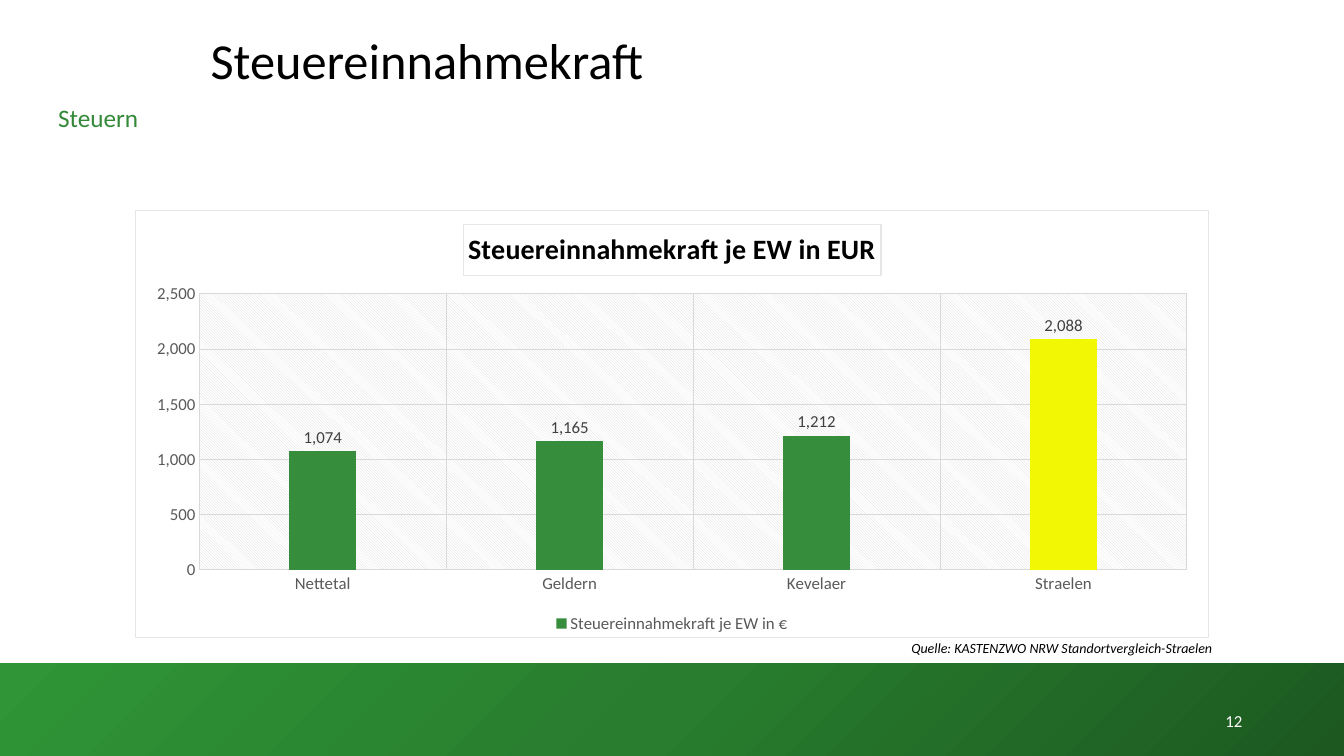
from copy import deepcopy
from lxml import etree
from pptx import Presentation
from pptx.chart.data import CategoryChartData
from pptx.dml.color import RGBColor
from pptx.enum.chart import XL_CHART_TYPE, XL_LABEL_POSITION, XL_LEGEND_POSITION, XL_TICK_MARK
from pptx.enum.shapes import MSO_SHAPE
from pptx.enum.text import MSO_ANCHOR, PP_ALIGN
from pptx.oxml import parse_xml
from pptx.oxml.ns import nsdecls, qn
from pptx.util import Pt

COLUMN = XL_CHART_TYPE.COLUMN_CLUSTERED
BOTTOM = XL_LEGEND_POSITION.BOTTOM
OUTSIDE = XL_LABEL_POSITION.OUTSIDE_END
NO_TICK = XL_TICK_MARK.NONE
RECT = MSO_SHAPE.RECTANGLE
TOP, MIDDLE = MSO_ANCHOR.TOP, MSO_ANCHOR.MIDDLE
LEFT, CENTER, RIGHT = PP_ALIGN.LEFT, PP_ALIGN.CENTER, PP_ALIGN.RIGHT
PX = 9144
FACE = "Calibri"
COLORS = {
    "black": "000000", "white": "FFFFFF", "dark": "1C5820", "mid": "287D2E",
    "light": "2F9536", "head": "348939", "bar": "368E3C", "mark": "F2F703",
    "grid": "D9D9D9", "frame": "E7E6E6", "axis": "595959", "label": "404040",
}


def rgb(name):
    return RGBColor.from_string(COLORS[name])


def style(font, size, color, **extra):
    values = {"name": FACE, "size": Pt(size), **extra}
    for key, value in values.items():
        setattr(font, key, value)
    font.color.rgb = rgb(color)


deck = Presentation()
deck.slide_width, deck.slide_height = 1333 * PX, 750 * PX
slide = deck.slides.add_slide(deck.slide_layouts[6])

band = slide.shapes.add_shape(RECT, 0, 658 * PX, 1333 * PX, 92 * PX)
band.shadow.inherit = False
band.line.fill.background()
band.fill.gradient()
band.fill.gradient_angle = 135
stops = band._element.spPr.find(".//" + qn("a:gsLst"))
stops.insert(1, deepcopy(stops[0]))
shades = [(0, "dark"), (0.5, "mid"), (1, "light")]
for stop, (place, name) in zip(band.fill.gradient_stops, shades):
    stop.position = place
    stop.color.rgb = rgb(name)

data = CategoryChartData(number_format="#,##0")
data.categories = ["Nettetal", "Geldern", "Kevelaer", "Straelen"]
data.add_series("Steuereinnahmekraft je EW in €", [1074, 1165, 1212, 2088])
chart = slide.shapes.add_chart(COLUMN, 134 * PX, 208 * PX, 1065 * PX, 425 * PX, data).chart
style(chart.font, 10, "black")
chart.has_title = True
chart.chart_title.text_frame.text = "Steuereinnahmekraft je EW in EUR"
style(chart.chart_title.text_frame.paragraphs[0].runs[0].font, 20, "black", bold=True)
chart.has_legend = True
chart.legend.position = BOTTOM
chart.legend.include_in_layout = False
style(chart.legend.font, 12, "axis")

for axis in (chart.category_axis, chart.value_axis):
    axis.major_tick_mark = axis.minor_tick_mark = NO_TICK
    axis.has_major_gridlines = True
    style(axis.tick_labels.font, 12, "axis")
    for line in (axis.major_gridlines.format.line, axis.format.line):
        line.color.rgb = rgb("grid")
        line.width = Pt(0.75)
scale = chart.value_axis
scale.format.line.fill.background()
scale.minimum_scale, scale.maximum_scale, scale.major_unit = 0, 2500, 500
scale.tick_labels.number_format = "#,##0"
scale.tick_labels.number_format_is_linked = False

plot = chart.plots[0]
plot.gap_width, plot.overlap, plot.vary_by_categories = 267, -43, False
bars = plot.series[0]
for part, name in ((bars, "bar"), (bars.points[3], "mark")):
    part.format.fill.solid()
    part.format.fill.fore_color.rgb = rgb(name)
labels = bars.data_labels
formats = {"show_value": True, "position": OUTSIDE, "number_format": "#,##0",
           "number_format_is_linked": False}
for key, value in formats.items():
    setattr(labels, key, value)
style(labels.font, 12, "label")

frame = parse_xml(
    f'<c:spPr {nsdecls("c", "a")}><a:solidFill><a:srgbClr val="{COLORS["white"]}"/></a:solidFill>'
    f'<a:ln w="9525"><a:solidFill><a:srgbClr val="{COLORS["frame"]}"/></a:solidFill></a:ln></c:spPr>')
hatch = parse_xml(
    f'<c:spPr {nsdecls("c", "a")}><a:pattFill prst="ltDnDiag">'
    f'<a:fgClr><a:srgbClr val="{COLORS["grid"]}"/></a:fgClr>'
    f'<a:bgClr><a:srgbClr val="{COLORS["white"]}"/></a:bgClr></a:pattFill>'
    '<a:ln><a:noFill/></a:ln></c:spPr>')
root = chart._chartSpace.find(qn("c:chart"))
root.find(qn("c:title")).append(deepcopy(frame))
root.find(qn("c:plotArea")).append(hatch)
root.addnext(frame)
etree.cleanup_namespaces(root)

texts = [
    ("12", (942, 695, 300, 40), 12, "white", RIGHT, MIDDLE, {}),
    ("Steuereinnahmekraft", (199, 31, 1074, 87), 36, "black", LEFT, TOP, {}),
    ("Steuern", (36, 97, 123, 40), 18, "head", CENTER, TOP, {}),
    ("Quelle: KASTENZWO NRW Standortvergleich-Straelen", (894, 630, 347, 27), 10, "black",
     LEFT, TOP, {"italic": True}),
]
for text, spot, size, color, align, anchor, extra in texts:
    body = slide.shapes.add_textbox(*(n * PX for n in spot)).text_frame
    body.word_wrap = True
    body.vertical_anchor = anchor
    para = body.paragraphs[0]
    para.text = text
    para.alignment = align
    if size == 36:
        para.line_spacing = 0.9
    style(para.runs[0].font, size, color, **extra)

deck.save("out.pptx")
